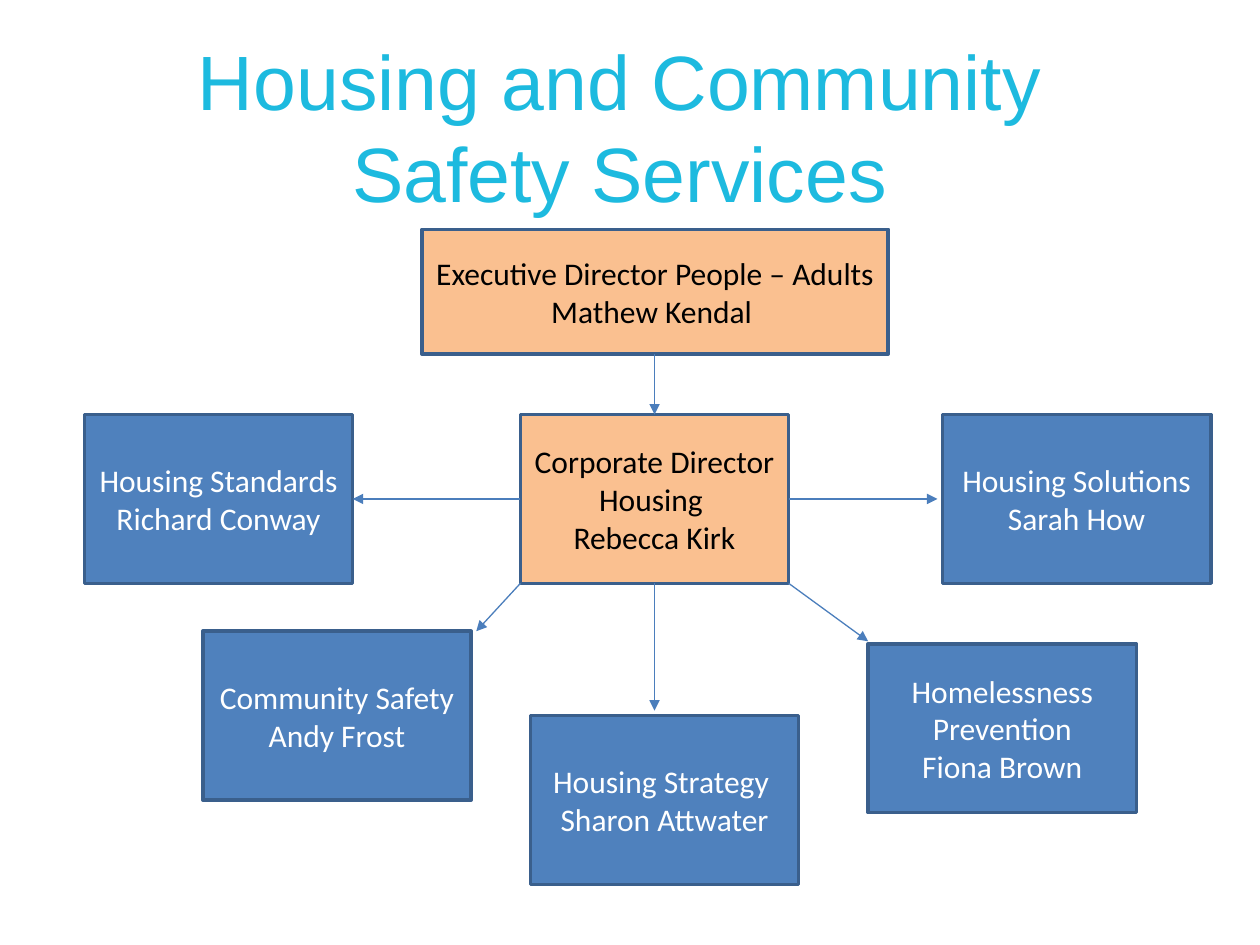
from lxml.etree import SubElement
from pptx import Presentation
from pptx.dml.color import RGBColor
from pptx.enum.shapes import MSO_CONNECTOR, MSO_SHAPE
from pptx.enum.text import MSO_ANCHOR, PP_ALIGN
from pptx.oxml.ns import qn
from pptx.util import Inches, Pt

COLORS = {
    "title": "1DBADF", "director": "FAC090", "team": "4F81BD",
    "border": "3A5F8C", "arrow": "4B7EBC", "dark": "000000", "light": "FFFFFF",
}
CARD_W, CARD_H = 2.13, 1.34

# Top left corner, then service and its lead
TEAMS = [
    (0.67, 3.29, ["Housing Standards ", "Richard Conway"]),
    (4.21, 5.68, ["Housing Strategy ", "Sharon Attwater"]),
    (6.89, 5.11, ["Homelessness Prevention", "Fiona Brown"]),
    (7.48, 3.29, ["Housing Solutions", "Sarah How"]),
    (1.61, 5.01, ["Community Safety", "Andy Frost"]),
]


def rgb(name):
    return RGBColor.from_string(COLORS[name])


def write_text(sp, lines, size=18, font="Calibri", color="dark"):
    tf = sp.text_frame
    tf.word_wrap = True
    tf.vertical_anchor = MSO_ANCHOR.MIDDLE
    for i, line in enumerate(lines):
        p = tf.paragraphs[0] if i == 0 else tf.add_paragraph()
        p.alignment = PP_ALIGN.CENTER
        r = p.add_run()
        r.text = line
        r.font.size = Pt(size)
        r.font.name = font
        r.font.color.rgb = rgb(color)


def add_title(slide, box, text):
    sp = slide.shapes.add_textbox(*map(Inches, box))
    write_text(sp, [text], size=44, font="Arial", color="title")


def add_card(slide, box, lines, fill, color):
    sp = slide.shapes.add_shape(MSO_SHAPE.RECTANGLE, *map(Inches, box))
    sp.shadow.inherit = False
    sp.fill.solid()
    sp.fill.fore_color.rgb = rgb(fill)
    sp.line.color.rgb = rgb("border")
    sp.line.width = Pt(2)
    write_text(sp, lines, color=color)


def add_arrow(slide, start, end):
    line = slide.shapes.add_connector(
        MSO_CONNECTOR.STRAIGHT, *map(Inches, (*start, *end)))
    line.line.color.rgb = rgb("arrow")
    line.line.width = Pt(0.75)
    SubElement(line.line._get_or_add_ln(), qn("a:tailEnd"), type="triangle")
    SubElement(line._element.spPr, qn("a:effectLst"))


def add_chart_of_teams(slide, executive, corporate):
    """Place the two directors in their boxes, the teams and the arrows."""
    for x, y, lines in TEAMS:
        add_card(slide, (x, y, CARD_W, CARD_H), lines, "team", "light")
    add_card(slide, corporate, ["Corporate Director Housing ", "Rebecca Kirk"],
             "director", "dark")
    add_card(slide, executive,
             ["Executive Director People – Adults", "Mathew Kendal "],
             "director", "dark")

    left, top, width, height = corporate
    right, bottom = left + width, top + height
    center, middle = left + width / 2, top + height / 2
    add_arrow(slide, (center, executive[1] + executive[3]), (center, top))
    for start, end in [
        ((left, middle), (2.8, middle)),
        ((right, middle), (7.44, middle)),
        ((center, bottom), (center, 5.64)),
        ((right, bottom), (6.89, 5.09)),
        ((left, bottom), (3.78, 5.01)),
    ]:
        add_arrow(slide, start, end)


def main():
    prs = Presentation()
    prs.slide_width, prs.slide_height = Inches(10), Inches(7.5)
    slide = prs.slides.add_slide(prs.slide_layouts[6])
    add_title(slide, (0.67, 0.19, 8.5, 1.61),
              "Housing and Community Safety Services")
    add_chart_of_teams(slide, executive=(3.35, 1.82, 3.7, 0.99),
                       corporate=(4.13, 3.29, CARD_W, CARD_H))
    prs.save("out.pptx")


if __name__ == "__main__":
    main()
